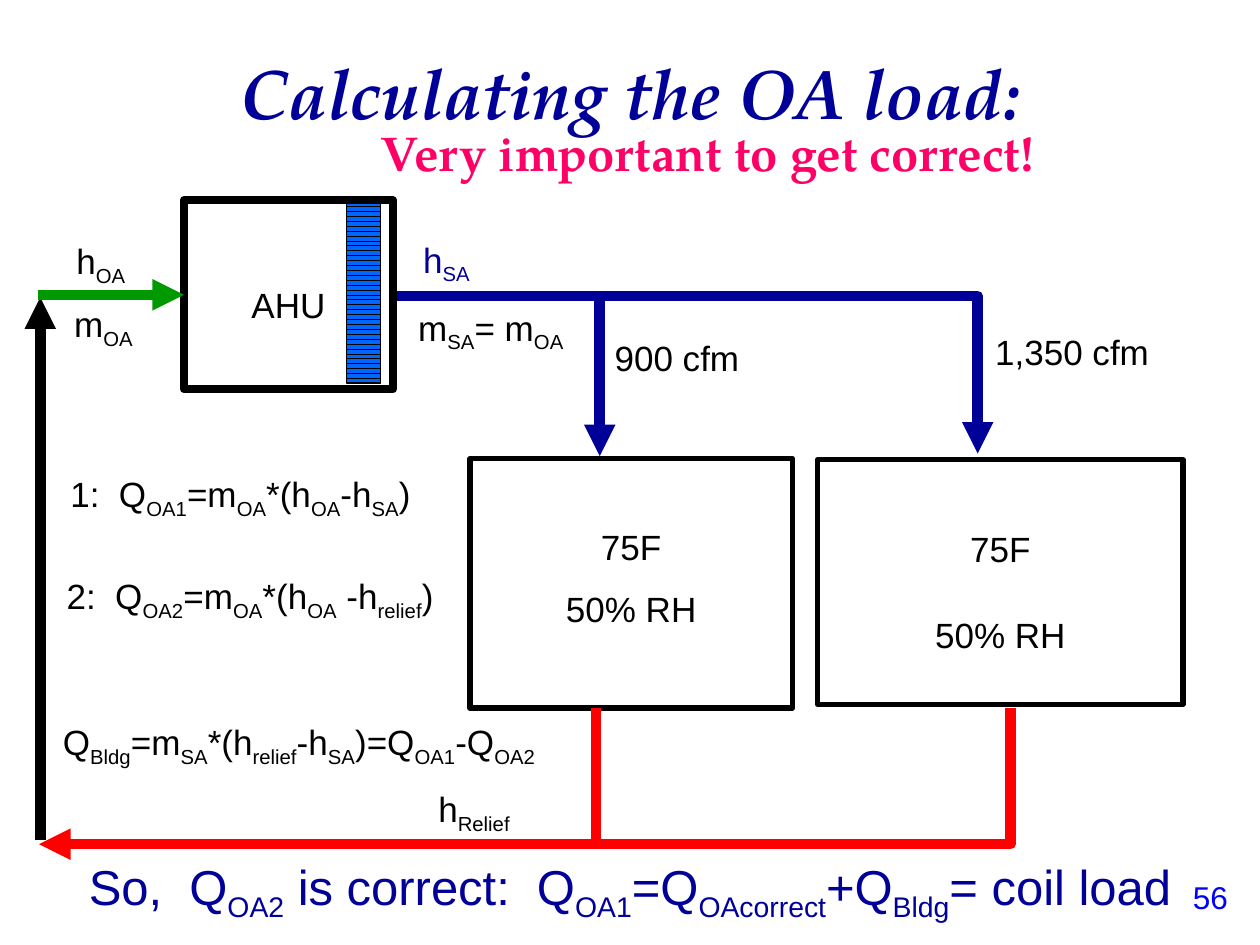
from dataclasses import dataclass

from lxml.etree import SubElement
from pptx import Presentation
from pptx.dml.color import RGBColor
from pptx.enum.dml import MSO_PATTERN as Pattern
from pptx.enum.shapes import MSO_CONNECTOR as Connector, MSO_SHAPE as Shape
from pptx.enum.text import MSO_ANCHOR as Anchor, PP_ALIGN as Align
from pptx.oxml.ns import qn
from pptx.util import Inches, Pt

COLORS = {
    "navy": "000099",
    "black": "000000",
    "green": "009900",
    "red": "FF0000",
    "pink": "FF0066",
    "blue": "0000FF",
    "coil": "0066FF",
}
SANS, SERIF = "Arial", "TeX Gyre Pagella"
DUCT_WIDTH = 6
SUPPLY_Y, RELIEF_Y = 2.35, 6.7


@dataclass
class Label:
    text: str
    left: float
    top: float
    width: float
    height: float = 0.43
    size: int = 20
    color: str = "black"
    font: str = SANS
    bold: bool = False
    align: Align = Align.LEFT


@dataclass
class Block:
    lines: tuple[str, ...]
    left: float
    top: float
    width: float
    height: float
    border: float = 3
    inset_top: float = 0.05
    gap: float = 0
    anchor: Anchor = Anchor.TOP


@dataclass
class Duct:
    points: tuple[tuple[float, float], ...]
    color: str
    arrow: bool = False


LABELS = [
    Label("56", 9.37, 6.92, 0.63, 0.4, 18, "blue"),
    Label("h|SA", 3.26, 1.84, 1.94, color="navy"),
    Label("m|SA|= m|OA", 3.22, 2.38, 1.52),
    Label("900 cfm", 4.78, 2.62, 1.43),
    Label("1,350 cfm", 7.8, 2.57, 1.76),
    Label("h|OA", 0.19, 1.85, 1.22, align=Align.CENTER),
    Label("m|OA", 0.49, 2.35, 1.1),
    Label("1:  Q|OA1|=m|OA|*(h|OA|-h|SA|)", 0.46, 3.7, 3.14),
    Label("2:  Q|OA2|=m|OA|*(h|OA| -h|relief|)", 0.43, 4.51, 3.51),
    Label("Q|Bldg|=m|SA|*(h|relief|-h|SA|)=Q|OA1|-Q|OA2", 0.4, 5.67, 4.22),
    Label("h|Relief", 3.38, 6.2, 1.22),
    Label("So,  Q|OA2| is correct:  Q|OA1|=Q|OAcorrect|+Q|Bldg|= coil load",
          0, 6.75, 10, 0.57, 28, "navy", align=Align.CENTER),
    Label("Very important to get correct!", 2.92, 0.92, 5.95, 0.57, 28, "pink", SERIF, True),
]
ROOMS = [
    Block(("75F", "50% RH"), 3.73, 3.64, 2.56, 1.98, inset_top=0.53, gap=11.5),
    Block(("75F", "50% RH"), 6.49, 3.65, 2.9, 1.94, inset_top=0.54, gap=25),
]
AIR_HANDLER = Block(("AHU",), 1.46, 1.59, 1.66, 1.5, 4.5, 0.2, anchor=Anchor.MIDDLE)
DUCTS = [
    Duct(((3.1, SUPPLY_Y), (7.76, SUPPLY_Y), (7.76, 3.6)), "navy", True),
    Duct(((4.76, 2.38), (4.76, 3.62)), "navy", True),
    Duct(((0.75, RELIEF_Y), (8.02, RELIEF_Y), (8.02, 5.62)), "red"),
    Duct(((4.73, 5.62), (4.73, 6.68)), "red"),
    Duct(((0.75, RELIEF_Y), (0.31, RELIEF_Y)), "red", True),
    Duct(((0.32, 6.67), (0.32, 2.36)), "black", True),
]
OUTDOOR_AIR = Duct(((0.3, 2.34), (1.46, 2.34)), "green", True)


def rgb(name: str) -> RGBColor:
    return RGBColor.from_string(COLORS[name])


def write_line(para, text: str, color: str, align: Align, **formats) -> None:
    para.alignment = align
    for index, part in enumerate(text.split("|")):
        span = para.add_run()
        span.text = part
        for name, value in formats.items():
            setattr(span.font, name, value)
        span.font.color.rgb = rgb(color)
        if index % 2:
            span._r.get_or_add_rPr().set("baseline", "-25000")


def add_label(slide, label: Label) -> None:
    lengths = (label.left, label.top, label.width, label.height)
    box = slide.shapes.add_textbox(*map(Inches, lengths))
    box.text_frame.word_wrap = True
    write_line(box.text_frame.paragraphs[0], label.text, label.color, label.align,
               name=label.font, size=Pt(label.size), bold=label.bold)


def add_block(slide, block: Block):
    lengths = (block.left, block.top, block.width, block.height)
    box = slide.shapes.add_shape(Shape.RECTANGLE, *map(Inches, lengths))
    box.shadow.inherit = False
    box.fill.background()
    box.line.color.rgb = rgb("black")
    box.line.width = Pt(block.border)
    frame = box.text_frame
    frame.margin_top = Inches(block.inset_top)
    frame.vertical_anchor = block.anchor
    for index, text in enumerate(block.lines):
        para = frame.add_paragraph() if index else frame.paragraphs[0]
        if index:
            para.space_before = Pt(block.gap)
        write_line(para, text, "black", Align.CENTER, name=SANS, size=Pt(20))
    return box


def add_duct(slide, duct: Duct):
    points = [(Inches(x), Inches(y)) for x, y in duct.points]
    straight = len(points) == 2
    if straight:
        line = slide.shapes.add_connector(Connector.STRAIGHT, *points[0], *points[1])
    else:
        builder = slide.shapes.build_freeform(*points[0])
        builder.add_line_segments(points[1:], close=False)
        line = builder.convert_to_shape()
        line.fill.background()
        line.shadow.inherit = False
    line.line.color.rgb = rgb(duct.color)
    line.line.width = Pt(DUCT_WIDTH)
    properties = line._element.spPr
    outline = properties.find(qn("a:ln"))
    SubElement(outline, qn("a:round"))
    if duct.arrow:
        SubElement(outline, qn("a:tailEnd"), type="triangle")
    if straight:
        SubElement(properties, qn("a:effectLst"))
    return line


def add_coil(slide) -> None:
    coil = slide.shapes.add_shape(Shape.RECTANGLE, *map(Inches, (2.75, 1.6, 0.27, 1.44)))
    coil.shadow.inherit = False
    coil.fill.patterned()
    coil.fill.pattern = Pattern.WAVE
    coil.fill.fore_color.rgb = rgb("black")
    coil.fill.back_color.rgb = rgb("coil")
    coil.line.color.rgb = rgb("black")
    coil.line.width = Pt(1)


def add_title(slide, text: str) -> None:
    title = slide.shapes.title
    place = {"left": 0, "top": 0.3, "width": 10, "height": 0.86}
    for name, value in place.items():
        setattr(title, name, Inches(value))
    title.text_frame.vertical_anchor = Anchor.MIDDLE
    write_line(title.text_frame.paragraphs[0], text, "navy", Align.CENTER,
               name=SERIF, size=Pt(40), bold=True, italic=True)


def main() -> None:
    deck = Presentation()
    deck.slide_width, deck.slide_height = Inches(10), Inches(7.5)
    page = deck.slides.add_slide(deck.slide_layouts[5])
    add_title(page, "Calculating the OA load:")
    for room in ROOMS:
        add_block(page, room)
    for duct in DUCTS:
        add_duct(page, duct)
    add_coil(page)
    air_handler = add_block(page, AIR_HANDLER)
    add_duct(page, OUTDOOR_AIR).end_connect(air_handler, 1)
    for label in LABELS:
        add_label(page, label)
    deck.save("out.pptx")


if __name__ == "__main__":
    main()
